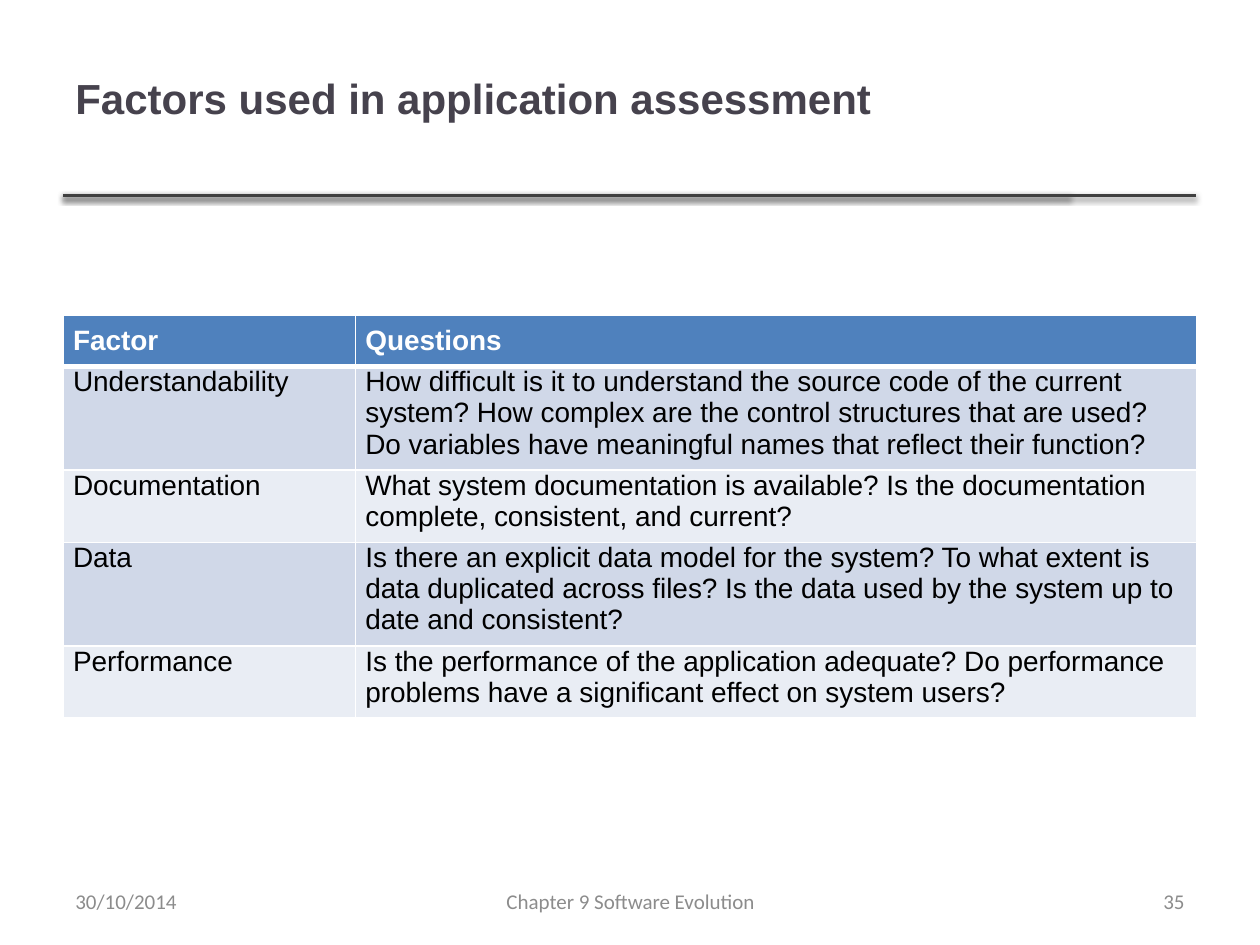
from dataclasses import dataclass

from lxml import etree
from pptx import Presentation
from pptx.dml.color import RGBColor
from pptx.enum import shapes, text
from pptx.oxml import ns, parse_xml
from pptx.util import Inches, Pt

COLORS = {
    "title": "46424D",
    "rule": "404040",
    "header": "4F81BD",
    "odd_row": "D0D8E8",
    "even_row": "E9EDF4",
    "white": "FFFFFF",
    "body": "000000",
    "footer": "8C8C8C",
}
MARGIN = 0.5
RULE_TOP = 1.55
RULE_ENDS = (8.49, 9.49)
COLUMN_WIDTHS = (2.32, 6.68)
CELL_INSET = 0.08


@dataclass
class Label:
    content: str
    left: float
    top: float
    width: float
    height: float
    size: int = 12
    font: str = "Calibri"
    color: str = "footer"
    bold: bool = False
    align: text.PP_ALIGN = text.PP_ALIGN.LEFT


@dataclass
class Row:
    factor: str
    questions: str
    height: float


LABELS = [
    Label("Factors used in application assessment", MARGIN, 0.15, 9, 1.25,
          24, "Arial", "title", True),
    Label("Chapter 9 Software Evolution", 3.42, 6.95, 3.17, 0.4,
          align=text.PP_ALIGN.CENTER),
    Label("35", 7.17, 6.95, 2.33, 0.4, align=text.PP_ALIGN.RIGHT),
    Label("30/10/2014", MARGIN, 6.95, 2.33, 0.4),
]

ROWS = [
    Row("Factor", "Questions", 0.41),
    Row("Understandability",
        "How difficult is it to understand the source code of the current "
        "system? How complex are the control structures that are used? "
        "Do variables have meaningful names that reflect their function?", 0.82),
    Row("Documentation",
        "What system documentation is available? Is the documentation "
        "complete, consistent, and current?", 0.57),
    Row("Data",
        "Is there an explicit data model for the system? To what extent is "
        "data duplicated across files? Is the data used by the system up to "
        "date and consistent?", 0.82),
    Row("Performance",
        "Is the performance of the application adequate? Do performance "
        "problems have a significant effect on system users?", 0.57),
]


def rgb(name: str) -> RGBColor:
    return RGBColor.from_string(COLORS[name])


def format_runs(paragraph, size: int, font: str, color: str, bold: bool) -> None:
    for run in paragraph.runs:
        run.font.size = Pt(size)
        run.font.name = font
        run.font.bold = bold
        run.font.color.rgb = rgb(color)


def add_label(slide, label: Label) -> None:
    shape = slide.shapes.add_textbox(Inches(label.left), Inches(label.top),
                                     Inches(label.width), Inches(label.height))
    frame = shape.text_frame
    frame.word_wrap = True
    frame.vertical_anchor = text.MSO_ANCHOR.MIDDLE
    frame.text = label.content
    paragraph = frame.paragraphs[0]
    paragraph.alignment = label.align
    format_runs(paragraph, label.size, label.font, label.color, label.bold)


def add_rule(slide, end: float) -> None:
    connector = slide.shapes.add_connector(
        shapes.MSO_CONNECTOR.STRAIGHT, Inches(MARGIN), Inches(RULE_TOP),
        Inches(end), Inches(RULE_TOP))
    connector.line.color.rgb = rgb("rule")
    connector.line.width = Pt(2)
    connector._element.spPr.append(parse_xml(
        f'<a:effectLst {ns.nsdecls("a")}>'
        f'<a:outerShdw blurRad="{Pt(3.1)}" dist="{Pt(1.6)}" dir="5400000" rotWithShape="0">'
        f'<a:srgbClr val="{COLORS["body"]}"><a:alpha val="38000"/></a:srgbClr>'
        '</a:outerShdw></a:effectLst>'))


def set_borders(cell, top: float, bottom: float) -> None:
    properties = cell._tc.get_or_add_tcPr()
    widths = {"lnL": 1, "lnR": 1, "lnT": top, "lnB": bottom}
    for index, (side, width) in enumerate(widths.items()):
        border = etree.Element(ns.qn(f"a:{side}"), w=str(Pt(width)))
        fill = etree.SubElement(border, ns.qn("a:solidFill"))
        etree.SubElement(fill, ns.qn("a:srgbClr"), val=COLORS["white"])
        properties.insert(index, border)


def format_cell(cell, content: str, row_index: int) -> None:
    header = row_index == 0
    fill = "header" if header else "odd_row" if row_index % 2 else "even_row"
    cell.fill.solid()
    cell.fill.fore_color.rgb = rgb(fill)
    cell.margin_left = cell.margin_right = cell.margin_bottom = Inches(CELL_INSET)
    cell.margin_top = Inches(CELL_INSET if header else 0)
    set_borders(cell, 3 if row_index == 1 else 1, 3 if header else 1)
    cell.text_frame.text = content
    paragraph = cell.text_frame.paragraphs[0]
    paragraph.space_after = Pt(6)
    format_runs(paragraph, 16, "Arial", "white" if header else "body", header)


def add_factor_table(slide) -> None:
    table = slide.shapes.add_table(
        len(ROWS), len(COLUMN_WIDTHS), Inches(MARGIN), Inches(2.5),
        Inches(sum(COLUMN_WIDTHS)), Inches(sum(row.height for row in ROWS))).table
    for column, width in zip(table.columns, COLUMN_WIDTHS):
        column.width = Inches(width)
    for row_index, row in enumerate(ROWS):
        table.rows[row_index].height = Inches(row.height)
        for column_index, content in enumerate((row.factor, row.questions)):
            format_cell(table.cell(row_index, column_index), content, row_index)


def main() -> None:
    presentation = Presentation()
    presentation.slide_width = Inches(10)
    presentation.slide_height = Inches(7.5)
    slide = presentation.slides.add_slide(presentation.slide_layouts[6])
    for end in RULE_ENDS:
        add_rule(slide, end)
    add_factor_table(slide)
    for label in LABELS:
        add_label(slide, label)
    presentation.save("out.pptx")


if __name__ == "__main__":
    main()
